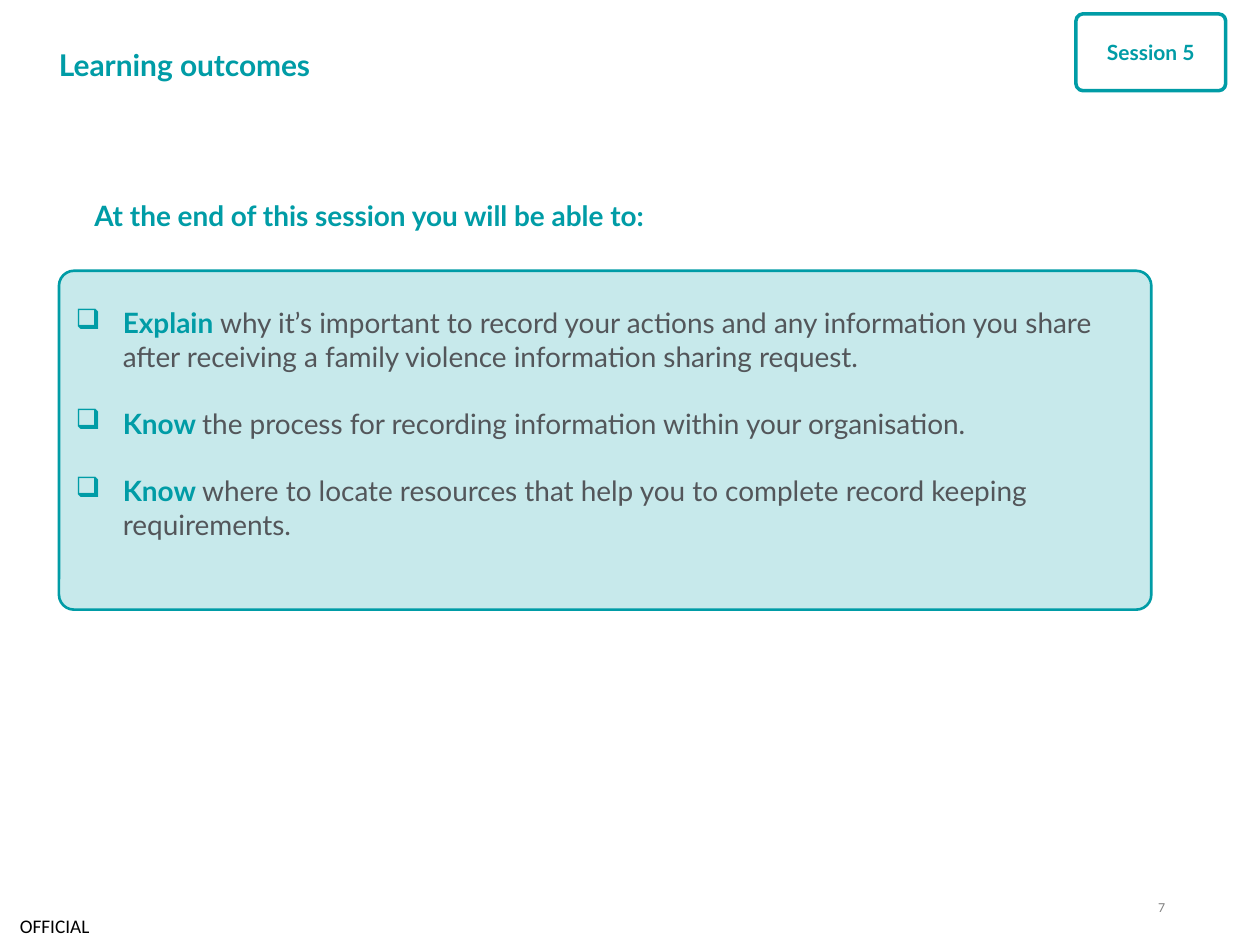
from dataclasses import dataclass
from lxml.etree import SubElement
from pptx import Presentation
from pptx.dml.color import RGBColor
from pptx.enum.shapes import MSO_SHAPE
from pptx.enum.text import MSO_ANCHOR, PP_ALIGN
from pptx.oxml.ns import qn
from pptx.util import Cm, Pt


@dataclass(frozen=True)
class Theme:
    teal: str = "009CA6"
    body: str = "53565A"
    muted: str = "7F7F7F"
    black: str = "000000"
    white: str = "FFFFFF"
    panel_opacity: int = 22
    font: str = "Lato"
    marking_font: str = "Calibri"
    title_size: float = 17.1
    body_size: float = 16
    badge_size: float = 12
    marking_size: float = 11
    number_size: float = 7


THEME = Theme()
MARKING = "OFFICIAL"
TITLE = "Learning outcomes"
LEAD_IN = "At the end of this session you will be able to:"
SESSION = "Session 5"
PAGE_NUMBER = "7"
OUTCOMES = [
    ("Explain ", "why it’s important to record your actions and any information you share "
                 "after receiving a family violence information sharing request."),
    ("Know ", "the process for recording information within your organisation."),
    ("Know ", "where to locate resources that help you to complete record keeping requirements."),
]


def write(paragraph, text, *, size, color=THEME.teal, bold=False, font=THEME.font,
          align=PP_ALIGN.LEFT):
    paragraph.alignment = align
    run = paragraph.add_run()
    run.text = text
    run.font.name = font
    run.font.size = Pt(size)
    run.font.bold = bold
    run.font.color.rgb = RGBColor.from_string(color)


def set_frame(frame, margins, anchor=MSO_ANCHOR.MIDDLE):
    frame.word_wrap = True
    frame.vertical_anchor = anchor
    frame.margin_left, frame.margin_top, frame.margin_right, frame.margin_bottom = map(Cm, margins)
    return frame


def add_label(slide, box, text, margins=(0, 0, 0, 0), anchor=MSO_ANCHOR.MIDDLE, **style):
    label = slide.shapes.add_textbox(*map(Cm, box))
    write(set_frame(label.text_frame, margins, anchor).paragraphs[0], text, **style)


def add_panel(slide, box, rounding, fill, line_width):
    panel = slide.shapes.add_shape(MSO_SHAPE.ROUNDED_RECTANGLE, *map(Cm, box))
    panel.adjustments[0] = rounding
    panel.shadow.inherit = False
    panel.fill.solid()
    panel.fill.fore_color.rgb = RGBColor.from_string(fill)
    panel.line.color.rgb = RGBColor.from_string(THEME.teal)
    panel.line.width = Pt(line_width)
    return panel


def set_opacity(panel, percent):
    color = panel.fill._xPr.find(qn("a:solidFill"))[0]
    SubElement(color, qn("a:alpha"), val=str(percent * 1000))


def add_checkbox(paragraph, indent):
    properties = paragraph._p.get_or_add_pPr()
    properties.set("marL", str(indent))
    properties.set("indent", str(-indent))
    SubElement(properties, qn("a:buChar"), char="❑")


def add_lead_in(slide, box):
    table = slide.shapes.add_table(1, 1, *map(Cm, box)).table
    table.first_row = table.horz_banding = False
    cell = table.cell(0, 0)
    cell.fill.solid()
    cell.fill.fore_color.rgb = RGBColor.from_string(THEME.white)
    cell.margin_left = cell.margin_top = cell.margin_right = cell.margin_bottom = Cm(0.1)
    write(cell.text_frame.paragraphs[0], LEAD_IN, size=THEME.body_size, bold=True)


def add_outcomes(slide, box):
    panel = add_panel(slide, box, 0.044, THEME.teal, 1.5)
    set_opacity(panel, THEME.panel_opacity)
    frame = set_frame(panel.text_frame, (0.25, 0.13, 0.25, 0.81))
    for index, (verb, outcome) in enumerate(OUTCOMES):
        paragraph = frame.add_paragraph() if index else frame.paragraphs[0]
        if index:
            paragraph.space_before = Pt(THEME.body_size * 1.2)
        add_checkbox(paragraph, Cm(0.95))
        write(paragraph, verb, size=THEME.body_size, bold=True)
        write(paragraph, outcome, size=THEME.body_size, color=THEME.body)


def add_session_badge(slide, box):
    badge = add_panel(slide, box, 0.094, THEME.white, 2)
    frame = set_frame(badge.text_frame, (0.5, 0.13, 0.5, 0.13))
    write(frame.paragraphs[0], SESSION, size=THEME.badge_size, bold=True, align=PP_ALIGN.CENTER)


def main():
    deck = Presentation()
    deck.slide_width, deck.slide_height = Cm(25.4), Cm(19.05)
    slide = deck.slides.add_slide(deck.slide_layouts[6])
    add_label(slide, (0, 18.26, 2.21, 0.79), MARKING, margins=(0.4, 0, 0, 0),
              size=THEME.marking_size, color=THEME.black, font=THEME.marking_font)
    add_label(slide, (1.19, 0.48, 19, 1.65), TITLE, size=THEME.title_size, bold=True)
    add_lead_in(slide, (1.8, 3.91, 21.97, 1.55))
    add_outcomes(slide, (1.19, 5.46, 22.02, 6.83))
    add_session_badge(slide, (21.69, 0.28, 3.02, 1.55))
    add_label(slide, (22.63, 18.14, 0.86, 0.5), PAGE_NUMBER, anchor=MSO_ANCHOR.TOP,
              size=THEME.number_size, color=THEME.muted, align=PP_ALIGN.RIGHT)
    deck.save("out.pptx")


if __name__ == "__main__":
    main()
